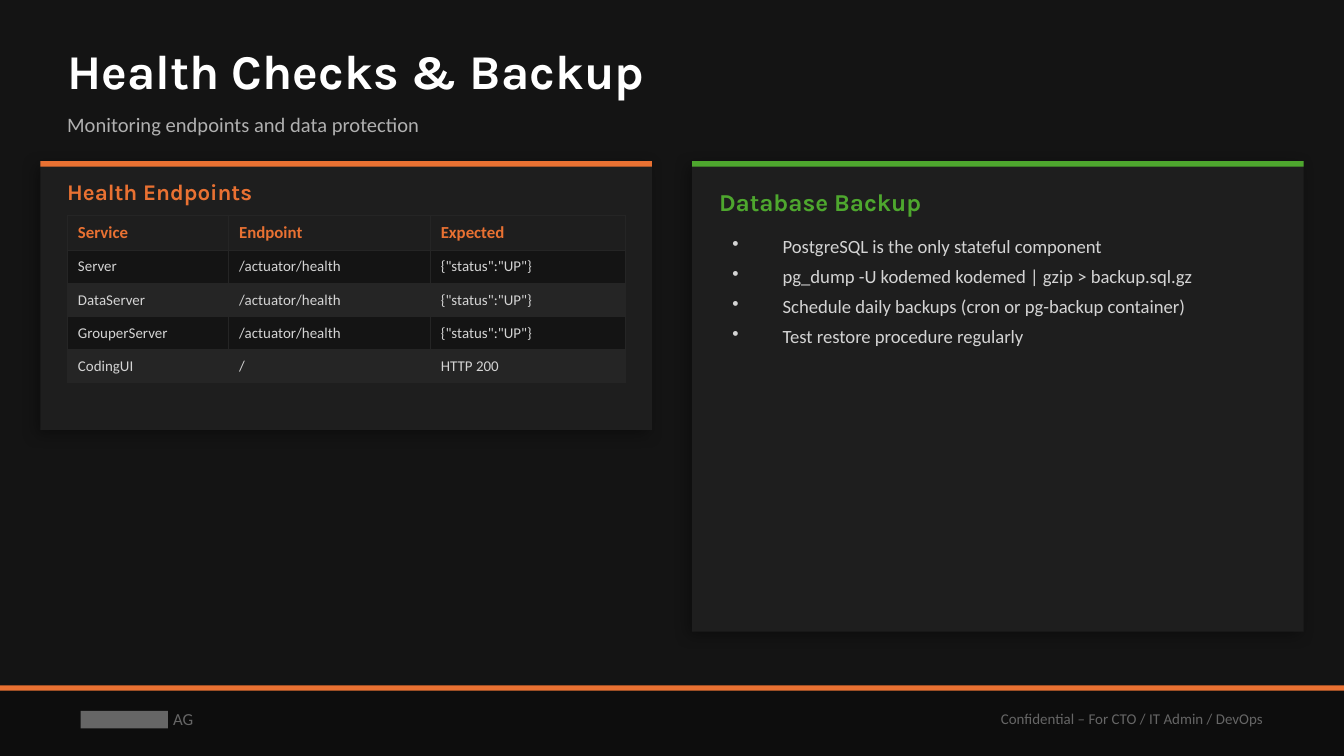
from dataclasses import dataclass

from lxml import etree
from pptx import Presentation
from pptx.dml.color import RGBColor
from pptx.enum.shapes import MSO_SHAPE
from pptx.enum.text import MSO_ANCHOR, MSO_AUTO_SIZE, PP_ALIGN
from pptx.oxml.ns import qn
from pptx.util import Emu, Pt

RECTANGLE = MSO_SHAPE.RECTANGLE
TOP, MIDDLE = MSO_ANCHOR.TOP, MSO_ANCHOR.MIDDLE
LEFT, RIGHT = PP_ALIGN.LEFT, PP_ALIGN.RIGHT
NO_AUTOFIT = MSO_AUTO_SIZE.NONE

EMU_PER_PX = 4572  # 200 px to the inch
PAGE_WIDTH, PAGE_HEIGHT = 2000, 1125
FOOTER_TOP, PANEL_TOP, PANEL_WIDTH = 1020, 240, 910
BAR_HEIGHT = 8
PANEL_PADDING = 40
CONTENT_WIDTH = PANEL_WIDTH - 2 * PANEL_PADDING
NO_INSETS, BOX_INSETS, CELL_INSETS = (0, 0), (20, 10), (16, 11)
BULLET_INDENT = 75


@dataclass(frozen=True)
class Theme:
    heading_font: str = "Karla"
    body_font: str = "Calibri"
    background: str = "141414"
    footer: str = "0D0D0D"
    panel: str = "1E1E1E"
    stripe: str = "252525"
    orange: str = "E97132"
    green: str = "4EA72E"
    white: str = "FFFFFF"
    body: str = "D4D4D4"
    subtitle: str = "B0B0B0"
    muted: str = "666666"
    title_size: int = 26
    backup_size: int = 13
    health_size: int = 12
    subtitle_size: int = 11
    bullet_size: int = 10
    header_size: int = 9
    cell_size: int = 8


THEME = Theme()

ENDPOINTS = [
    ("Service", "Endpoint", "Expected"),
    ("Server", "/actuator/health", '{"status":"UP"}'),
    ("DataServer", "/actuator/health", '{"status":"UP"}'),
    ("GrouperServer", "/actuator/health", '{"status":"UP"}'),
    ("CodingUI", "/", "HTTP 200"),
]
COLUMN_WIDTHS = (240, 300, 290)
ROW_HEIGHT = 40
BACKUP_NOTES = [
    "PostgreSQL is the only stateful component",
    "pg_dump -U kodemed kodemed | gzip > backup.sql.gz",
    "Schedule daily backups (cron or pg-backup container)",
    "Test restore procedure regularly",
]


def px(length):
    return Emu(length * EMU_PER_PX)


def rgb(colour):
    return RGBColor.from_string(colour)


def add_span(para, text, *, size, colour, font=THEME.body_font, bold=False):
    span = para.add_run()
    span.text = text
    span.font.name, span.font.size = font, Pt(size)
    span.font.bold = bold
    span.font.color.rgb = rgb(colour)


def set_insets(target, insets):
    target.margin_left = target.margin_right = px(insets[0])
    target.margin_top = target.margin_bottom = px(insets[1])


def prepare_frame(box, insets, anchor):
    frame = box.text_frame
    frame.word_wrap = True
    frame.auto_size = NO_AUTOFIT
    frame.vertical_anchor = anchor
    set_insets(frame, insets)
    return frame


def add_box(page, left, top, width, height, insets=NO_INSETS, anchor=MIDDLE):
    box = page.shapes.add_textbox(px(left), px(top), px(width), px(height))
    return prepare_frame(box, insets, anchor)


def add_rectangle(page, left, top, width, height, colour):
    shape = page.shapes.add_shape(RECTANGLE, px(left), px(top), px(width), px(height))
    shape.shadow.inherit = False
    shape.fill.solid()
    shape.fill.fore_color.rgb = rgb(colour)
    shape.line.fill.background()
    return shape


def add_shadow(shape):
    effects = shape._element.spPr.find(qn("a:effectLst"))
    shadow = etree.SubElement(effects, qn("a:outerShdw"), blurRad=str(Pt(8)),
                              dist=str(Pt(3)), dir=str(135 * 60000),
                              algn="bl", rotWithShape="0")
    black = etree.SubElement(shadow, qn("a:srgbClr"), val="000000")
    etree.SubElement(black, qn("a:alpha"), val="35000")


def add_panel(page, left, height, accent):
    add_shadow(add_rectangle(page, left, PANEL_TOP, PANEL_WIDTH, height, THEME.panel))
    add_rectangle(page, left, PANEL_TOP, PANEL_WIDTH, BAR_HEIGHT, accent)


def add_heading(page, text, left, top, height, *, size, colour):
    frame = add_box(page, left, top, CONTENT_WIDTH, height)
    add_span(frame.paragraphs[0], text, size=size, colour=colour,
             font=THEME.heading_font, bold=True)


def add_borders(cell, colour):
    properties = cell._tc.get_or_add_tcPr()
    for side in ("lnL", "lnR", "lnT", "lnB"):
        line = etree.SubElement(properties, qn(f"a:{side}"), w=str(Pt(0.5)))
        fill = etree.SubElement(line, qn("a:solidFill"))
        etree.SubElement(fill, qn("a:srgbClr"), val=colour)


def add_endpoint_table(page, left, top):
    table = page.shapes.add_table(
        len(ENDPOINTS), len(COLUMN_WIDTHS), px(left), px(top),
        px(CONTENT_WIDTH), px(ROW_HEIGHT * len(ENDPOINTS))).table
    for column, width in zip(table.columns, COLUMN_WIDTHS):
        column.width = px(width)
    for index, values in enumerate(ENDPOINTS):
        header = index == 0
        stripe = THEME.background if index % 2 else THEME.stripe
        for cell, text in zip(table.rows[index].cells, values):
            set_insets(cell, CELL_INSETS)
            cell.vertical_anchor = MIDDLE
            add_borders(cell, THEME.stripe)
            cell.fill.solid()
            cell.fill.fore_color.rgb = rgb(THEME.panel if header else stripe)
            add_span(cell.text_frame.paragraphs[0], text, bold=header,
                     size=THEME.header_size if header else THEME.cell_size,
                     colour=THEME.orange if header else THEME.body)


def add_bullets(page, notes, left, top, height):
    frame = add_box(page, left, top, CONTENT_WIDTH, height, BOX_INSETS, TOP)
    for index, note in enumerate(notes):
        para = frame.add_paragraph() if index else frame.paragraphs[0]
        para.space_after = Pt(4)
        properties = para._p.get_or_add_pPr()
        properties.set("marL", str(px(BULLET_INDENT)))
        properties.set("indent", str(px(-BULLET_INDENT)))
        etree.SubElement(properties, qn("a:buSzPct"), val="100000")
        etree.SubElement(properties, qn("a:buChar"), char="•")
        add_span(para, note, size=THEME.bullet_size, colour=THEME.body)


def add_footer(page):
    add_rectangle(page, 0, FOOTER_TOP, PAGE_WIDTH, PAGE_HEIGHT - FOOTER_TOP, THEME.footer)
    add_rectangle(page, 0, FOOTER_TOP, PAGE_WIDTH, BAR_HEIGHT, THEME.orange)
    # Plain block beside the legal form
    add_rectangle(page, 120, 1058, 130, 26, THEME.muted)
    legal_form = add_box(page, 238, 1030, 100, 80, BOX_INSETS).paragraphs[0]
    add_span(legal_form, "AG", size=THEME.header_size, colour=THEME.muted)
    notice = add_box(page, 1100, 1030, 800, 80, BOX_INSETS).paragraphs[0]
    notice.alignment = RIGHT
    add_span(notice, "Confidential – For CTO / IT Admin / DevOps",
             size=THEME.cell_size, colour=THEME.muted)


def add_titles(page):
    title = page.shapes.title
    title.left, title.top, title.width, title.height = map(px, (100, 50, 1800, 110))
    para = prepare_frame(title, NO_INSETS, MIDDLE).paragraphs[0]
    para.alignment = LEFT
    add_span(para, "Health Checks & Backup", size=THEME.title_size,
             colour=THEME.white, font=THEME.heading_font, bold=True)
    subtitle = add_box(page, 100, 150, 1800, 70)
    add_span(subtitle.paragraphs[0], "Monitoring endpoints and data protection",
             size=THEME.subtitle_size, colour=THEME.subtitle)


def main():
    deck = Presentation()
    deck.slide_width, deck.slide_height = px(PAGE_WIDTH), px(PAGE_HEIGHT)
    page = deck.slides.add_slide(deck.slide_layouts[5])
    page.background.fill.solid()
    page.background.fill.fore_color.rgb = rgb(THEME.background)
    add_footer(page)
    add_titles(page)

    # Health endpoints panel
    left = 60
    add_panel(page, left, 400, THEME.orange)
    add_heading(page, "Health Endpoints", left + PANEL_PADDING, 260, 50,
                size=THEME.health_size, colour=THEME.orange)
    add_endpoint_table(page, left + PANEL_PADDING, 320)

    # Database backup panel
    left = PAGE_WIDTH - left - PANEL_WIDTH
    add_panel(page, left, 700, THEME.green)
    add_heading(page, "Database Backup", left + PANEL_PADDING, 270, 60,
                size=THEME.backup_size, colour=THEME.green)
    add_bullets(page, BACKUP_NOTES, left + PANEL_PADDING, 340, 560)
    deck.save("out.pptx")


if __name__ == "__main__":
    main()
